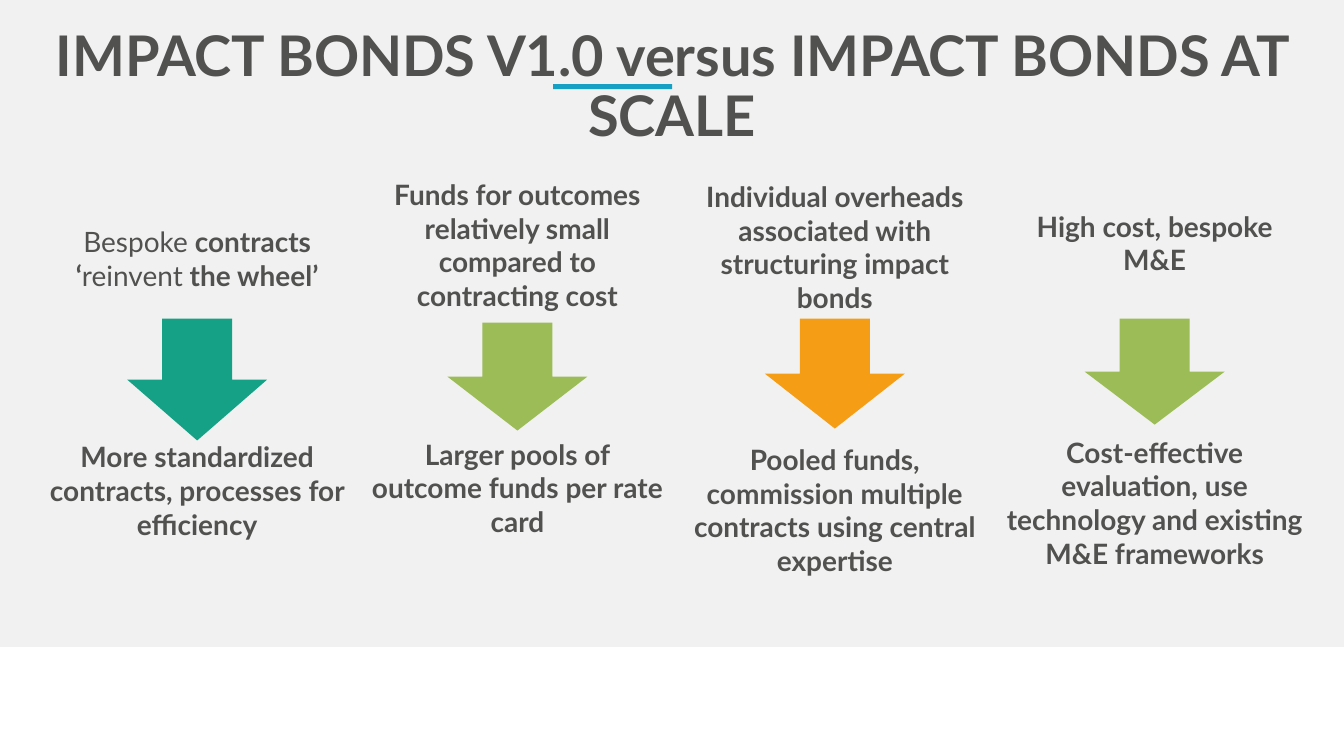
"""Build the slide that sets first impact bonds against bonds at scale."""
from pptx import Presentation
from pptx.dml.color import RGBColor
from pptx.enum.shapes import MSO_SHAPE
from pptx.enum.text import MSO_ANCHOR, PP_ALIGN
from pptx.util import Cm, Pt

HUES = {"back": "F1F1F1", "white": "FFFFFF", "ink": "515250", "blue": "16A0C3",
        "teal": "15A185", "green": "9BBC57", "amber": "F49D15"}


def add_block(home, kind, box, hue):
    block = home.add_shape(kind, *map(Cm, box))
    block.shadow.inherit = False
    block.fill.solid()
    block.fill.fore_color.rgb = RGBColor.from_string(HUES[hue])
    block.line.fill.background()
    return block


def add_words(home, box, runs, size, anchor):
    frame = home.add_textbox(*map(Cm, box)).text_frame
    for name, value in {"word_wrap": True, "vertical_anchor": anchor}.items():
        setattr(frame, name, value)
    para = frame.paragraphs[0]
    para.alignment = PP_ALIGN.CENTER
    for text, bold in runs:
        run = para.add_run()
        run.text = text
        for name, value in {"name": "Lato", "size": Pt(size), "bold": bold}.items():
            setattr(run.font, name, value)
        run.font.color.rgb = RGBColor.from_string(HUES["ink"])
    return para


deck = Presentation()
deck.slide_width, deck.slide_height = Cm(33.87), Cm(19.05)
slide = deck.slides.add_slide(deck.slide_layouts[6])
slide.background.fill.solid()
slide.background.fill.fore_color.rgb = RGBColor.from_string(HUES["back"])
shapes = slide.shapes

foot = add_block(shapes, MSO_SHAPE.RECTANGLE, (0, 16.31, 33.87, 2.74), "white")
foot.line.color.rgb = RGBColor.from_string(HUES["white"])
foot.line.width = Pt(1)

title = add_words(shapes, (0, 0.58, 33.87, 2.49),
                  [("IMPACT BONDS V1.0 versus IMPACT BONDS AT SCALE", True)],
                  40, MSO_ANCHOR.TOP)
title.line_spacing = 0.9
add_block(shapes, MSO_SHAPE.RECTANGLE, (13.94, 2.12, 3, 0.13), "blue")

WIDE, HIGH = 8, 0.79
ARROW = 3.53
COLUMNS = [
    (0.97, 6.12, [("Bespoke", False), (" contracts ‘", True),
                  ("reinvent", False), (" the wheel’", True)],
     8.03, 3.07, "teal",
     11.96, "More standardized contracts, processes for efficiency"),
    (9.04, 5.77, [("Funds for outcomes relatively small compared to contracting cost", True)],
     8.13, 2.72, "green",
     11.89, "Larger pools of outcome funds per rate card"),
    (17.04, 5.82, [("Individual overheads associated with structuring impact bonds", True)],
     8.03, 2.77, "amber",
     12.45, "Pooled funds, commission multiple contracts using central expertise"),
    (25.1, 5.72, [("High cost, bespoke M&E", True)],
     8.03, 2.67, "green",
     12.27, "Cost-effective evaluation, use technology and existing M&E frameworks"),
]

for left, top, before, start, drop, hue, low, after in COLUMNS:
    group = shapes.add_group_shape().shapes
    add_words(group, (left, top, WIDE, HIGH), before, 20, MSO_ANCHOR.MIDDLE)
    add_block(group, MSO_SHAPE.DOWN_ARROW,
              (left + (WIDE - ARROW) / 2, start, ARROW, drop), hue)
    add_words(group, (left, low, WIDE, HIGH), [(after, True)], 20, MSO_ANCHOR.MIDDLE)

deck.save("out.pptx")
